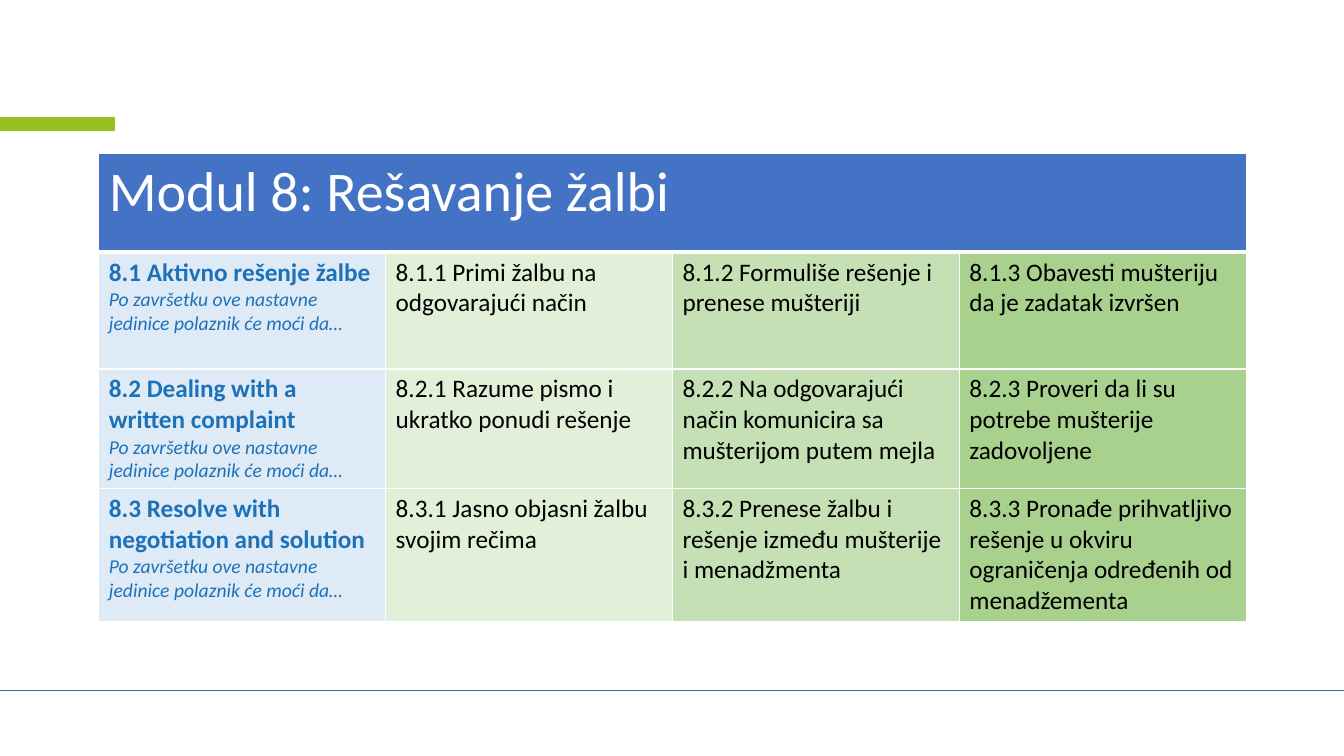
import dataclasses

import pptx
import pptx.dml.color
import pptx.enum.shapes
import pptx.oxml
import pptx.oxml.ns
import pptx.util


@dataclasses.dataclass(frozen=True)
class Theme:
    """Colours, type sizes and font of the slide."""

    font: str = "Calibri"
    title_size: int = 40
    body_size: int = 18
    hint_size: int = 14
    white: str = "FFFFFF"
    black: str = "000000"
    blue: str = "1D71B8"
    lime: str = "95C11F"
    header: str = "4472C4"
    columns: tuple = ("DEEBF7", "E2F0D9", "C5E0B4", "A9D18E")


THEME = Theme()
WIDTH, HEIGHT = 13.33, 7.5
TITLE = "Modul 8: Rešavanje žalbi"
HINT = "Po završetku ove nastavne jedinice polaznik će moći da…"
UNITS = [
    ("8.1 Aktivno rešenje žalbe",
     "8.1.1 Primi žalbu na odgovarajući način",
     "8.1.2 Formuliše rešenje i prenese mušteriji",
     "8.1.3 Obavesti mušteriju da je zadatak izvršen"),
    ("8.2 Dealing with a written complaint",
     "8.2.1 Razume pismo i ukratko ponudi rešenje",
     "8.2.2 Na odgovarajući način komunicira sa mušterijom putem mejla",
     "8.2.3 Proveri da li su potrebe mušterije zadovoljene"),
    ("8.3 Resolve with negotiation and solution",
     "8.3.1 Jasno objasni žalbu svojim rečima",
     "8.3.2 Prenese žalbu i rešenje između mušterije i menadžmenta",
     "8.3.3 Pronađe prihvatljivo rešenje u okviru ograničenja određenih od menadžementa"),
]


def rgb(value):
    """Turn a hex string into a colour."""
    return pptx.dml.color.RGBColor.from_string(value)


def inches(*lengths):
    """Turn lengths in inches into a list of slide units."""
    return [pptx.util.Inches(length) for length in lengths]


def write(para, text, size, colour, **formats):
    """Put one formatted span of text in a paragraph."""
    span = para.add_run()
    span.text = text
    values = {"name": THEME.font, "size": pptx.util.Pt(size),
              "bold": False, "italic": False, **formats}
    for name, value in values.items():
        setattr(span.font, name, value)
    span.font.color.rgb = rgb(colour)


def style_cell(cell, fill, bottom=1):
    """Give a cell white borders and a solid fill."""
    properties = cell._tc.get_or_add_tcPr()
    for side, points in {"L": 1, "R": 1, "T": 1, "B": bottom}.items():
        properties.append(pptx.oxml.parse_xml(
            f'<a:ln{side} {pptx.oxml.ns.nsdecls("a")} w="{pptx.util.Pt(points)}">'
            f'<a:solidFill><a:srgbClr val="{THEME.white}"/></a:solidFill></a:ln{side}>'))
    cell.fill.solid()
    cell.fill.fore_color.rgb = rgb(fill)


def add_accents(page, box):
    """Draw the lime tab at the left and the rule at the foot of the box."""
    left, top, width, height = box
    tab = page.shapes.add_shape(
        pptx.enum.shapes.MSO_SHAPE.RECTANGLE,
        *inches(left, top + height * 0.156, width * 0.085, height * 0.016))
    tab.shadow.inherit = False
    tab.fill.solid()
    tab.fill.fore_color.rgb = rgb(THEME.lime)
    tab.line.color.rgb = rgb(THEME.lime)
    tab.line.width = pptx.util.Pt(1)
    foot = top + height * 0.913
    rule = page.shapes.add_connector(
        pptx.enum.shapes.MSO_CONNECTOR.STRAIGHT, *inches(left, foot, left + width, foot))
    rule.line.color.rgb = rgb(THEME.blue)
    rule.line.width = pptx.util.Pt(1)
    rule._element.spPr.append(
        pptx.oxml.parse_xml(f'<a:effectLst {pptx.oxml.ns.nsdecls("a")}/>'))


def add_module_table(page, box, header_height=0.98):
    """Fill the box with a title row and one row for each unit."""
    left, top, width, height = box
    columns = len(THEME.columns)
    table = page.shapes.add_table(
        len(UNITS) + 1, columns, *inches(left, top, width, height)).table
    for column in table.columns:
        column.width = pptx.util.Inches(width / columns)
    for row in table.rows:
        row.height = pptx.util.Inches((height - header_height) / len(UNITS))
    table.rows[0].height = pptx.util.Inches(header_height)

    for index in range(columns):
        style_cell(table.cell(0, index), THEME.header, bottom=3)
    title = table.cell(0, 0)
    title.merge(table.cell(0, columns - 1))
    write(title.text_frame.paragraphs[0], TITLE, THEME.title_size, THEME.white)

    for row, (unit, *outcomes) in enumerate(UNITS, start=1):
        for index, fill in enumerate(THEME.columns):
            style_cell(table.cell(row, index), fill)
        frame = table.cell(row, 0).text_frame
        write(frame.paragraphs[0], unit, THEME.body_size, THEME.blue, bold=True)
        write(frame.add_paragraph(), HINT, THEME.hint_size, THEME.blue, italic=True)
        for index, outcome in enumerate(outcomes, start=1):
            para = table.cell(row, index).text_frame.paragraphs[0]
            write(para, outcome, THEME.body_size, THEME.black)


def main():
    """Build the deck and save it."""
    deck = pptx.Presentation()
    deck.slide_width, deck.slide_height = inches(WIDTH, HEIGHT)
    page = deck.slides.add_slide(deck.slide_layouts.get_by_name("Blank"))
    add_accents(page, (0, 0, WIDTH, HEIGHT))
    add_module_table(page, (0.98, 1.52, 11.38, 4.46))
    deck.save("out.pptx")


if __name__ == "__main__":
    main()
